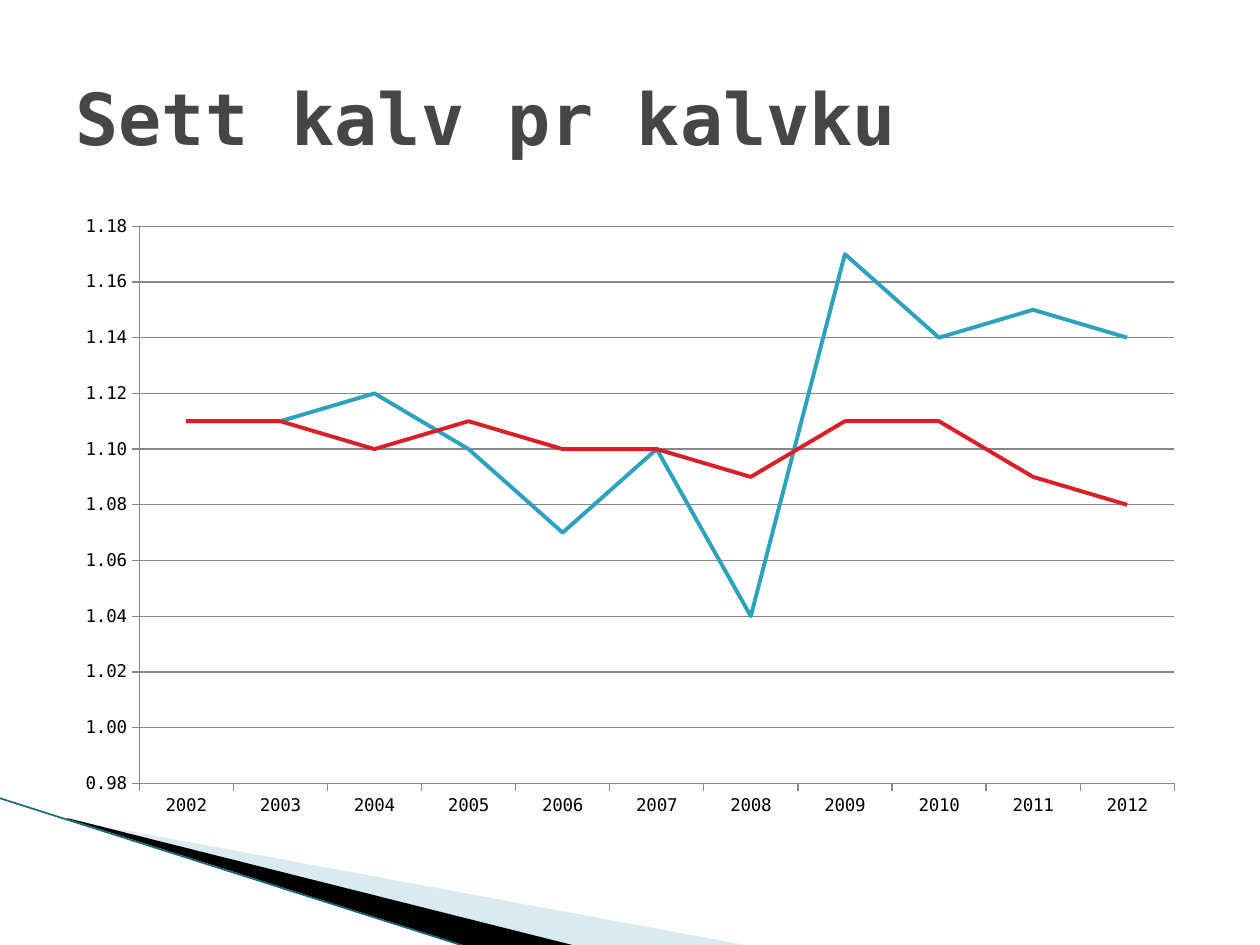
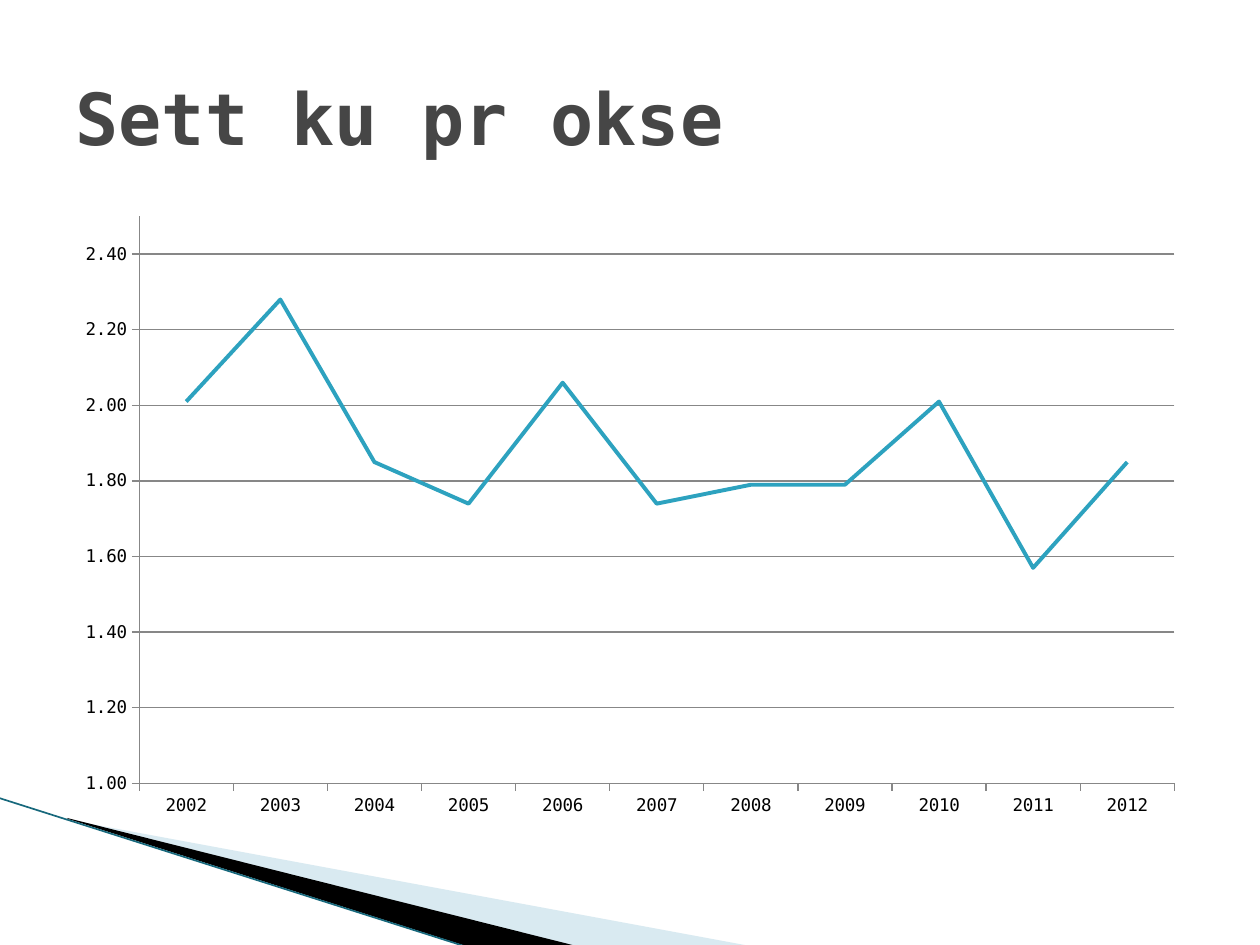
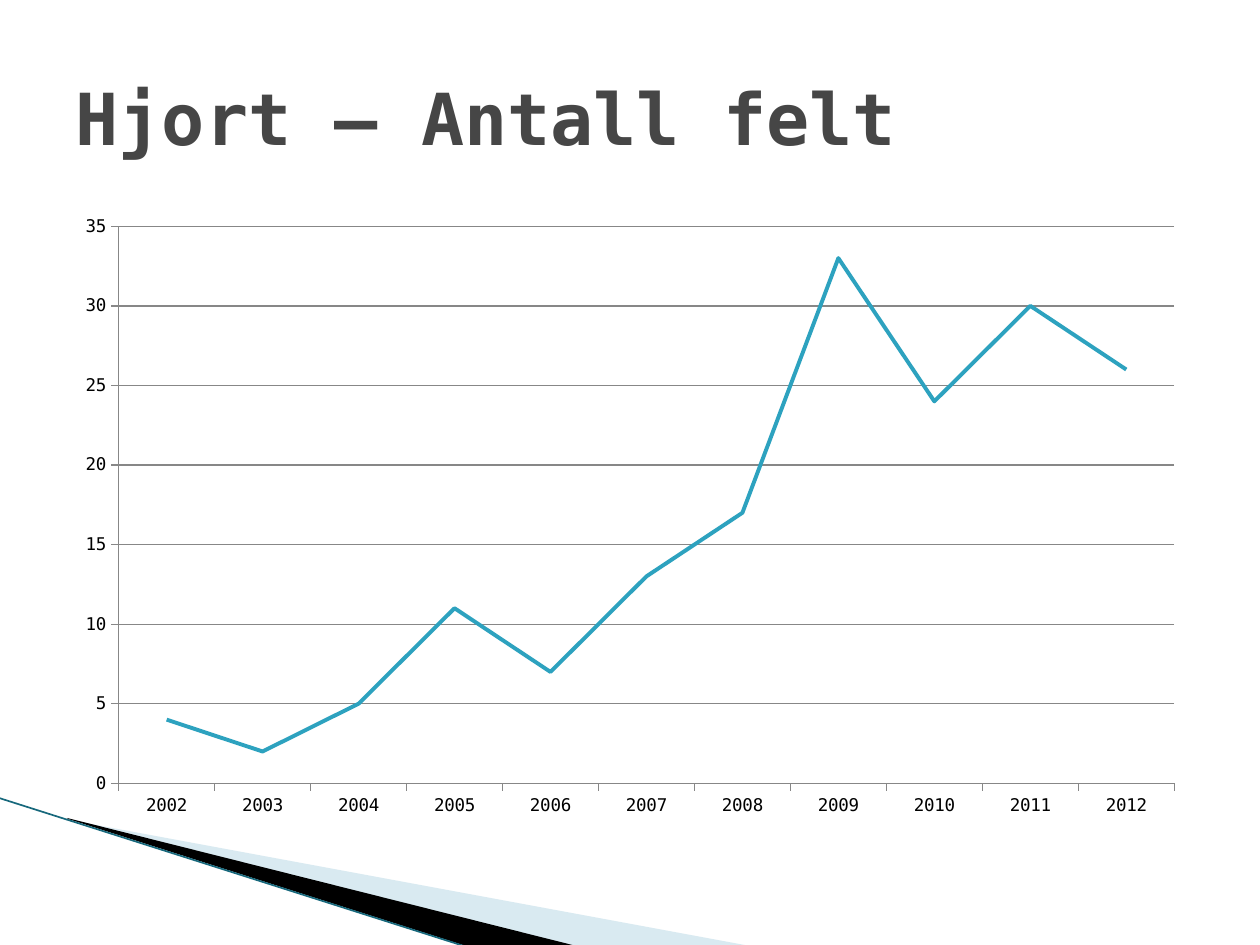
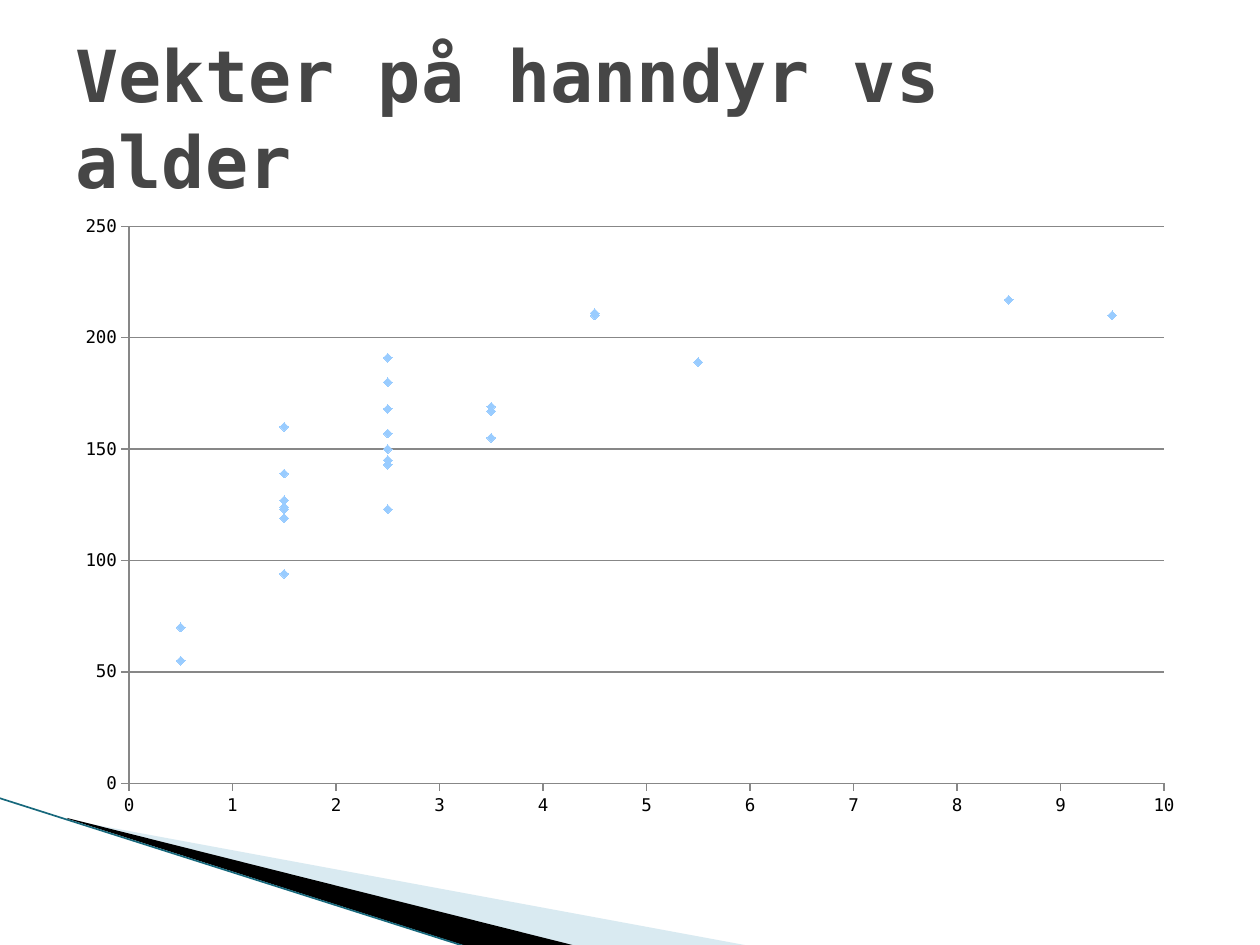
from lxml import etree
from pptx import Presentation
from pptx.chart.data import CategoryChartData, XyChartData
from pptx.dml.color import RGBColor
from pptx.enum.chart import XL_CHART_TYPE, XL_MARKER_STYLE, XL_TICK_MARK
from pptx.enum.shapes import MSO_CONNECTOR
from pptx.enum.text import MSO_ANCHOR, MSO_AUTO_SIZE, PP_ALIGN
from pptx.oxml.ns import qn
from pptx.util import Pt

LINE = XL_CHART_TYPE.LINE
SCATTER = XL_CHART_TYPE.XY_SCATTER
DIAMOND = XL_MARKER_STYLE.DIAMOND
NO_MARKER = XL_MARKER_STYLE.NONE
OUTSIDE = XL_TICK_MARK.OUTSIDE
NO_TICK = XL_TICK_MARK.NONE
STRAIGHT = MSO_CONNECTOR.STRAIGHT
MIDDLE = MSO_ANCHOR.MIDDLE
NO_FIT = MSO_AUTO_SIZE.NONE
LEFT = PP_ALIGN.LEFT

PX = 914400 / 126
PAGE_SIZE = (1260, 945)
TITLE_BOX = (63, 38, 1134, 158)
CHART_BOX = (63, 204, 1134, 624)
BAND_BOX = (0, 798, 750, 149)
TITLE_ONLY = 5

FONT = "DejaVu Sans Mono"
TITLE_COLOR = "464646"
TEXT_COLOR = "000000"
GRID_COLOR = "878787"
BLUE, RED = "2DA2BF", "DA1F28"
MARKER_COLOR = "99CCFF"
PALE_BAND, DARK_BAND, BAND_LINE = "A0CBDC", "000000", "17687C"

YEARS = [str(year) for year in range(2002, 2013)]
LINE_PAGES = [
    {
        "title": "Sett kalv pr kalvku",
        "series": [
            [1.11, 1.11, 1.12, 1.1, 1.07, 1.1, 1.04, 1.17, 1.14, 1.15, 1.14],
            [1.11, 1.11, 1.1, 1.11, 1.1, 1.1, 1.09, 1.11, 1.11, 1.09, 1.08],
        ],
        "scale": (0.98, 1.18, 0.02),
        "number_format": "0.00",
    },
    {
        "title": "Sett ku pr okse",
        "series": [[2.01, 2.28, 1.85, 1.74, 2.06, 1.74, 1.79, 1.79, 2.01, 1.57, 1.85]],
        "scale": (1, 2.5, 0.2),
        "number_format": "0.00",
    },
    {
        "title": "Hjort – Antall felt",
        "series": [[4, 2, 5, 11, 7, 13, 17, 33, 24, 30, 26]],
        "scale": (0, 35, 5),
        "number_format": "General",
    },
]
# One entry per animal; None marks an unknown age or weight
AGES = [2.5, 1.5, 2.5, 3.5, 8.5, 2.5, 1.5, 1.5, 1.5, 1.5, 3.5, 9.5, 2.5, None, 2.5,
        2.5, 2.5, 5.5, 2.5, 2.5, 1.5, 3.5, 0.5, 0.5, 4.5, 1.5, 3.5, 1.5, 4.5]
WEIGHTS = [145, 139, 180, None, 217, 145, 160, None, 123, 94, 167, 210, 123, 147, 168,
           143, 150, 189, 191, 157, 127, 155, 70, 55, 211, 119, 169, 124, 210]


def px(length):
    return round(length * PX)


def rgb(color):
    return RGBColor.from_string(color)


def paint(fill, color, opacity=100):
    fill.solid()
    fill.fore_color.rgb = rgb(color)
    if opacity < 100:
        color_node = fill._xPr.find(qn("a:solidFill"))[0]
        etree.SubElement(color_node, qn("a:alpha"), val=str(opacity * 1000))


def draw_line(line, color, width):
    paint(line.fill, color)
    line.width = Pt(width)


def format_font(font, size, color, bold=False):
    font.name = FONT
    font.size = Pt(size)
    font.bold = bold
    font.color.rgb = rgb(color)


def write_text(frame, text, size, color, bold=False, anchor=MIDDLE, align=LEFT):
    frame.word_wrap = True
    frame.auto_size = NO_FIT
    frame.vertical_anchor = anchor
    para = frame.paragraphs[0]
    para.alignment = align
    span = para.add_run()
    span.text = text
    format_font(span.font, size, color, bold)


def add_band(page, box):
    """Draw the corner wedges and line; return the parts from back to front."""
    left, top, width, height = box
    bottom = top + height

    def wedge(points, color, opacity=100):
        (start_x, start_y), *others = [(px(left + x), px(top + y)) for x, y in points]
        builder = page.shapes.build_freeform(start_x, start_y)
        builder.add_line_segments(others)
        shape = builder.convert_to_shape()
        shape.shadow.inherit = False
        shape.line.fill.background()
        paint(shape.fill, color, opacity)
        return shape

    pale = wedge([(69, 22), (width, 148), (575, 148), (69, 21)], PALE_BAND, 40)
    dark = wedge([(67, 20), (576, 148), (469, height), (68, 21)], DARK_BAND)
    edge = page.shapes.add_connector(
        STRAIGHT, px(left - 1), px(top), px(left + 467), px(bottom))
    draw_line(edge.line, BAND_LINE, 0.95)
    etree.SubElement(edge.element.spPr, qn("a:effectLst"))
    return [pale, dark, edge]


def share_band(deck, layout):
    """Build the band on the first page, then hand it to the layout."""
    page = deck.slides[0]
    for position, part in enumerate(add_band(page, BAND_BOX), start=2):
        layout.shapes.element.insert(position, part.element)


def add_page(deck, layout, title):
    page = deck.slides.add_slide(layout)
    holder = page.shapes.title
    holder.left, holder.top, holder.width, holder.height = map(px, TITLE_BOX)
    write_text(holder.text_frame, title, size=41, color=TITLE_COLOR, bold=True)
    return page


def format_axis(axis, scale=None, number_format="General", grid=False):
    axis.major_tick_mark = OUTSIDE
    axis.minor_tick_mark = NO_TICK
    draw_line(axis.format.line, GRID_COLOR, 0.75)
    axis.has_major_gridlines = grid
    if grid:
        draw_line(axis.major_gridlines.format.line, GRID_COLOR, 0.75)
    axis.tick_labels.number_format = number_format
    axis.tick_labels.number_format_is_linked = False
    if scale:
        axis.minimum_scale, axis.maximum_scale, axis.major_unit = scale


def add_chart(page, box, kind, data):
    chart = page.shapes.add_chart(kind, *map(px, box), data).chart
    chart.has_legend = False
    chart.has_title = False
    format_font(chart.font, 10, TEXT_COLOR)
    chart.plots[0].vary_by_categories = False
    return chart


def add_line_chart(page, box, series, scale, number_format):
    data = CategoryChartData(number_format=number_format)
    data.categories = YEARS
    for number, values in enumerate(series, start=1):
        data.add_series(f"Series {number}", values)
    chart = add_chart(page, box, LINE, data)
    format_axis(chart.category_axis)
    format_axis(chart.value_axis, scale, number_format, grid=True)
    for curve, color in zip(chart.plots[0].series, (BLUE, RED)):
        curve.smooth = False
        curve.marker.style = NO_MARKER
        draw_line(curve.format.line, color, 2.25)


def drop_unknown_points(series):
    """Leave a gap in the stored values wherever one is unknown."""
    for point in list(series._element.iter(qn("c:pt"))):
        if point.find(qn("c:v")).text in (None, "", "None"):
            point.getparent().remove(point)


def add_weight_chart(page, box):
    data = XyChartData()
    points = data.add_series("Series 1")
    for age, weight in zip(AGES, WEIGHTS):
        points.add_data_point(age, weight)
    chart = add_chart(page, box, SCATTER, data)
    format_axis(chart.category_axis, (0, 10, 1))
    format_axis(chart.value_axis, (0, 250, 50), grid=True)
    cloud = chart.plots[0].series[0]
    drop_unknown_points(cloud)
    cloud.format.line.fill.background()
    cloud.marker.style = DIAMOND
    cloud.marker.size = 5
    paint(cloud.marker.format.fill, MARKER_COLOR)
    cloud.marker.format.line.fill.background()


def main():
    deck = Presentation()
    deck.slide_width, deck.slide_height = map(px, PAGE_SIZE)
    layout = deck.slide_layouts[TITLE_ONLY]

    # Yearly line charts
    for content in LINE_PAGES:
        page = add_page(deck, layout, content["title"])
        add_line_chart(page, CHART_BOX, content["series"],
                       content["scale"], content["number_format"])

    # Weight against age
    page = add_page(deck, layout, "Vekter på hanndyr vs alder")
    add_weight_chart(page, CHART_BOX)

    share_band(deck, layout)
    deck.save("out.pptx")


if __name__ == "__main__":
    main()
